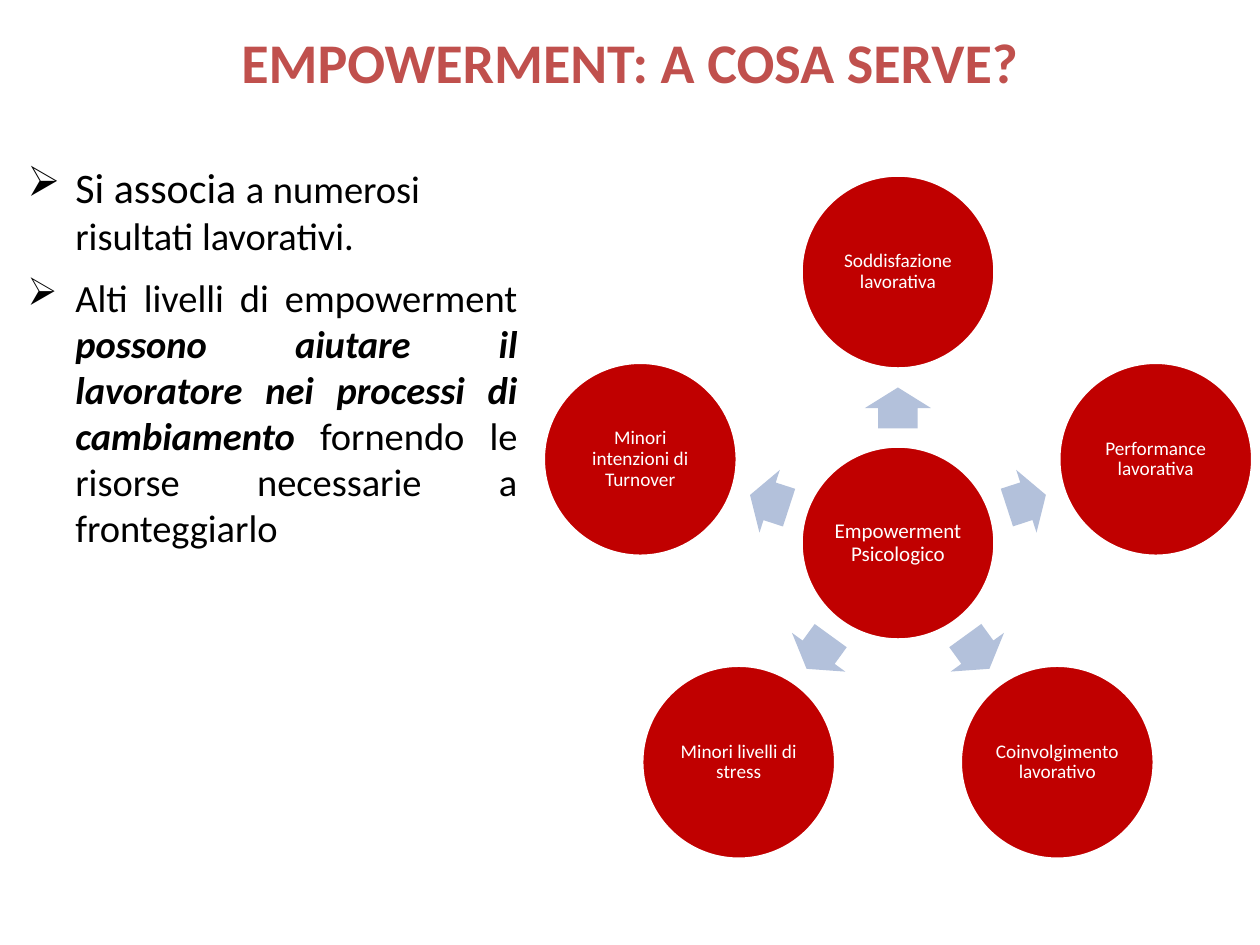
import math
from dataclasses import dataclass

from lxml import etree
from pptx import Presentation
from pptx import util as u
from pptx.dml.color import RGBColor
from pptx.enum import shapes, text
from pptx.oxml import ns

EMU_PER_PX = 914400 / 126


@dataclass(frozen=True)
class Theme:
    """Colours, font and type sizes of the slide."""
    font: str = "Calibri"
    heading: str = "C0504D"
    body: str = "000000"
    disc: str = "C00000"
    arrow: str = "B3C1DB"
    light: str = "FFFFFF"
    heading_pt: int = 32
    lead_pt: int = 24
    body_pt: int = 22
    hub_pt: int = 12
    outcome_pt: int = 11


THEME = Theme()
HUB_X, HUB_Y = 898, 543
OUTCOME_RADIUS, ARROW_RADIUS = 271, 135
DISC = 194
ARROW_LENGTH, ARROW_WIDTH = 41, 66
OUTCOMES = [
    "Soddisfazione lavorativa",
    "Performance lavorativa",
    "Coinvolgimento lavorativo",
    "Minori livelli di stress",
    "Minori intenzioni di Turnover",
]
POINTS = [
    (text.PP_ALIGN.LEFT, 0, [
        ("Si associa ", THEME.lead_pt, {}),
        ("a numerosi risultati lavorativi.", THEME.body_pt, {}),
    ]),
    (text.PP_ALIGN.JUSTIFY, 9, [
        ("Alti livelli di empowerment ", THEME.body_pt, {}),
        ("possono aiutare il lavoratore nei processi di cambiamento ",
         THEME.body_pt, {"bold": True, "italic": True}),
        ("fornendo le risorse necessarie a fronteggiarlo", THEME.body_pt, {}),
    ]),
]


def px(length):
    """Turn slide pixels into EMU."""
    return u.Emu(round(length * EMU_PER_PX))


def apply(target, values):
    """Set each named attribute on the target."""
    for name, value in values.items():
        setattr(target, name, value)


def add_run(paragraph, words, size, color, **extra):
    """Append a run in the theme font."""
    run = paragraph.add_run()
    run.text = words
    apply(run.font, {"name": THEME.font, "size": u.Pt(size), **extra})
    run.font.color.rgb = RGBColor.from_string(color)


def add_frame(slide, left, top, width, height, **values):
    """Add a wrapping text box and return its frame."""
    frame = slide.shapes.add_textbox(*map(px, (left, top, width, height))).text_frame
    apply(frame, {"word_wrap": True, **values})
    return frame


def add_heading(slide, words):
    """Add the centred heading."""
    frame = add_frame(slide, 54, 16, 1152, 158, margin_top=px(11))
    heading = frame.paragraphs[0]
    heading.alignment = text.PP_ALIGN.CENTER
    add_run(heading, words, THEME.heading_pt, THEME.heading, bold=True)


def set_bullet(paragraph, mark, indent):
    """Give a paragraph a hanging bullet."""
    props = paragraph._p.get_or_add_pPr()
    props.set("marL", str(px(indent)))
    props.set("indent", str(-px(indent)))
    etree.SubElement(props, ns.qn("a:buChar")).set("char", mark)


def add_points(slide, points):
    """Add the bulleted explanation."""
    frame = add_frame(slide, 15, 155, 515, 407)
    for index, (alignment, gap, runs) in enumerate(points):
        point = frame.add_paragraph() if index else frame.paragraphs[0]
        apply(point, {"alignment": alignment, "space_before": u.Pt(gap)})
        set_bullet(point, "➢", 48)
        for words, size, style in runs:
            add_run(point, words, size, THEME.body, **style)


def add_centred(slide, kind, x, y, width, height, fill):
    """Add a filled preset shape around a centre point."""
    box = map(px, (x - width / 2, y - height / 2, width, height))
    shape = slide.shapes.add_shape(kind, *box)
    shape.shadow.inherit = False
    shape.fill.solid()
    shape.fill.fore_color.rgb = RGBColor.from_string(fill)
    return shape


def add_disc(slide, x, y, words, size):
    """Add a labelled disc."""
    disc = add_centred(slide, shapes.MSO_SHAPE.OVAL, x, y, DISC, DISC, THEME.disc)
    disc.line.color.rgb = RGBColor.from_string(THEME.light)
    disc.line.width = u.Pt(2)
    frame = disc.text_frame
    margins = dict.fromkeys(
        ("margin_left", "margin_top", "margin_right", "margin_bottom"), px(2))
    apply(frame, {"word_wrap": True,
                  "vertical_anchor": text.MSO_ANCHOR.MIDDLE, **margins})
    label = frame.paragraphs[0]
    apply(label, {"alignment": text.PP_ALIGN.CENTER, "line_spacing": 0.9})
    add_run(label, words, size, THEME.light)


def add_arrow(slide, x, y, angle):
    """Add an arrow pointing outwards at an angle."""
    arrow = add_centred(slide, shapes.MSO_SHAPE.RIGHT_ARROW, x, y,
                        ARROW_LENGTH, ARROW_WIDTH, THEME.arrow)
    arrow.line.fill.background()
    arrow.adjustments[0] = 0.6
    arrow.adjustments[1] = 0.5
    arrow.rotation = angle


def around_hub(radius, angle):
    """Return the point at a radius and angle from the hub."""
    turn = math.radians(angle)
    return HUB_X + radius * math.cos(turn), HUB_Y + radius * math.sin(turn)


def add_wheel(slide, hub, outcomes):
    """Add the hub with its outcomes spread evenly around it."""
    add_disc(slide, HUB_X, HUB_Y, hub, THEME.hub_pt)
    for index, outcome in enumerate(outcomes):
        angle = (270 + index * 360 / len(outcomes)) % 360
        add_arrow(slide, *around_hub(ARROW_RADIUS, angle), angle)
        add_disc(slide, *around_hub(OUTCOME_RADIUS, angle), outcome, THEME.outcome_pt)


def main():
    """Build and save the slide."""
    deck = Presentation()
    apply(deck, {"slide_width": px(1260), "slide_height": px(945)})
    slide = deck.slides.add_slide(deck.slide_layouts[6])
    add_heading(slide, "EMPOWERMENT: A COSA SERVE?")
    add_wheel(slide, "Empowerment Psicologico", OUTCOMES)
    add_points(slide, POINTS)
    deck.save("out.pptx")


if __name__ == "__main__":
    main()
